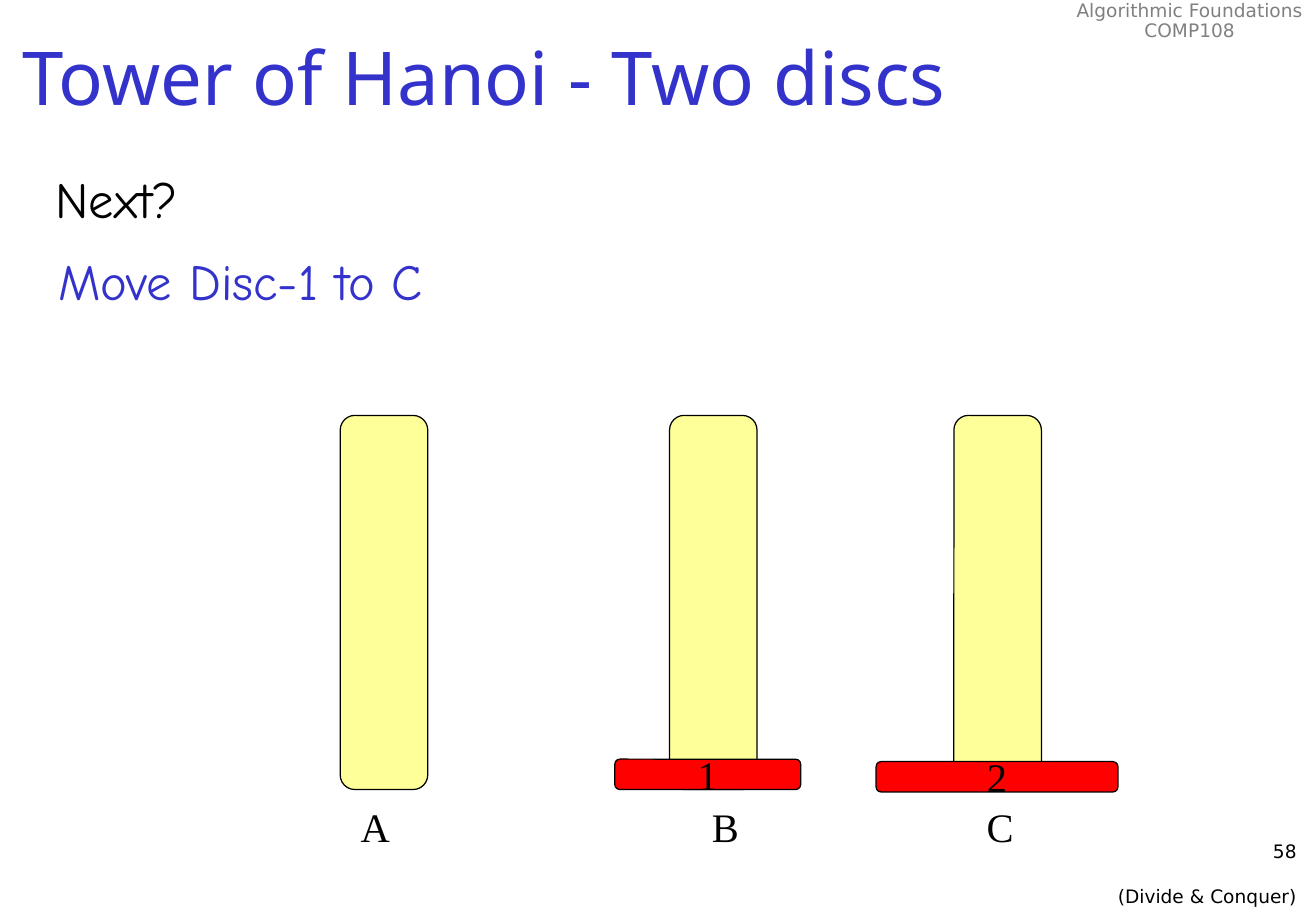
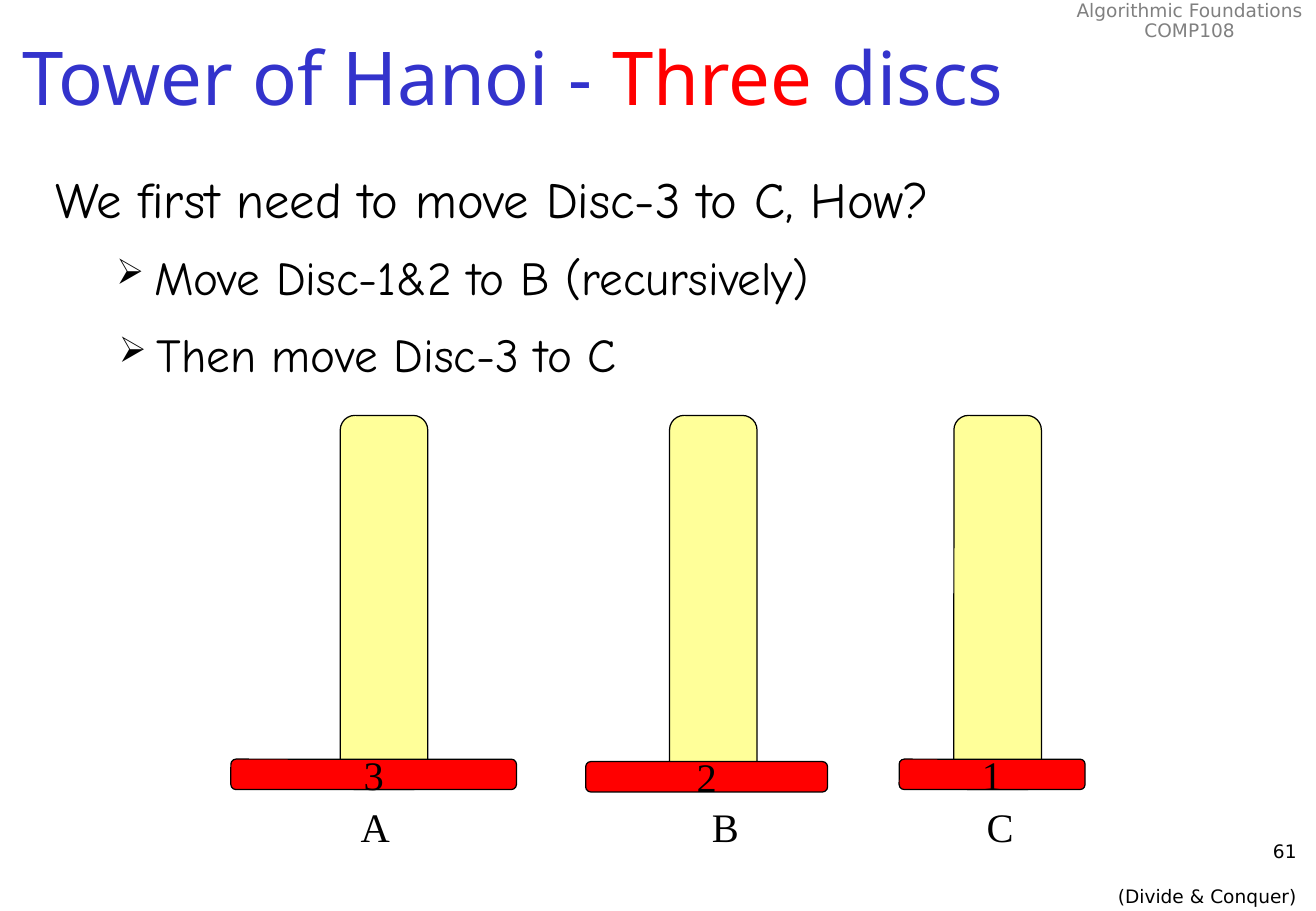
from dataclasses import dataclass

from lxml.etree import SubElement
from pptx import Presentation
from pptx.dml.color import RGBColor
from pptx.enum.shapes import MSO_SHAPE
from pptx.enum.text import MSO_ANCHOR, PP_ALIGN
from pptx.oxml.ns import qn
from pptx.slide import Slide
from pptx.text.text import TextFrame
from pptx.util import Inches, Pt


@dataclass(frozen=True)
class Theme:
    blue: str = "3333CC"
    red: str = "FF0000"
    peg: str = "FFFF99"
    ink: str = "000000"
    gray: str = "808080"
    head: str = "Noto Sans"
    body: str = "Comic Neue"
    note: str = "DejaVu Sans"
    label: str = "Times New Roman"
    title: float = 44
    lead: float = 30
    item: float = 28
    mark: float = 24
    small: float = 11


@dataclass(frozen=True)
class Peg:
    name: str
    left: float
    label: float


@dataclass(frozen=True)
class Disc:
    num: int
    left: float
    top: float = 6.25


T = Theme()
PEGS = (Peg("A", 2.8, 2.87), Peg("B", 5.51, 5.76), Peg("C", 7.85, 8.02))
WIDTHS = {1: 1.53, 2: 1.99, 3: 2.35}


# Text
def write(frame: TextFrame, text: str, *, size: float, font: str,
          color: str = T.ink, accent: str = "", align: PP_ALIGN = PP_ALIGN.LEFT,
          before: float = 0, after: float = 0, line: float = 1,
          bullet: str = "") -> None:
    """Add one paragraph; the accent part of the text is red."""
    para = frame.paragraphs[0]
    if para.runs:
        para = frame.add_paragraph()
    para.alignment = align
    para.space_before, para.space_after = Pt(before), Pt(after)
    para.line_spacing = line
    if bullet:
        props = para._p.get_or_add_pPr()
        props.set("marL", str(Inches(0.81)))
        props.set("indent", str(Inches(-0.31)))
        SubElement(props, qn("a:buSzPct"), val="75000")
        SubElement(props, qn("a:buChar"), char=bullet)
    for part in text.partition(accent) if accent else (text,):
        run = para.add_run()
        run.text = part
        run.font.size, run.font.name = Pt(size), font
        tint = T.red if accent and part == accent else color
        run.font.color.rgb = RGBColor.from_string(tint)


def box(slide: Slide, left: float, top: float, width: float, height: float,
        wrap: bool = True) -> TextFrame:
    area = slide.shapes.add_textbox(
        Inches(left), Inches(top), Inches(width), Inches(height))
    area.text_frame.word_wrap = wrap
    return area.text_frame


def point(frame: TextFrame, text: str) -> None:
    write(frame, text, size=T.item, font=T.body, bullet="➢",
          before=5.6, after=5.6)


# Pegs and discs
def block(slide: Slide, left: float, top: float, width: float, height: float,
          fill: str) -> TextFrame:
    shape = slide.shapes.add_shape(
        MSO_SHAPE.ROUNDED_RECTANGLE,
        Inches(left), Inches(top), Inches(width), Inches(height))
    shape.shadow.inherit = False
    shape.fill.solid()
    shape.fill.fore_color.rgb = RGBColor.from_string(fill)
    shape.line.color.rgb = RGBColor.from_string(T.ink)
    shape.line.width = Pt(0.75)
    return shape.text_frame


def tower(slide: Slide, discs: tuple[Disc, ...]) -> None:
    for peg in PEGS:
        block(slide, peg.left, 3.42, 0.72, 3.08, T.peg)
        write(box(slide, peg.label, 6.55, 0.48, 0.5), peg.name,
              size=T.mark, font=T.label)
    for disc in discs:
        frame = block(slide, disc.left, disc.top, WIDTHS[disc.num], 0.25, T.red)
        frame.word_wrap = False
        frame.vertical_anchor = MSO_ANCHOR.MIDDLE
        write(frame, str(disc.num), size=T.mark, font=T.label,
              align=PP_ALIGN.CENTER)


# Shared slide: header, footer, title, lead line and tower
def page(deck: Presentation, num: int, title: str, lead: str,
         discs: tuple[Disc, ...], accent: str = "") -> tuple[Slide, TextFrame]:
    slide = deck.slides.add_slide(deck.slide_layouts[6])
    head = box(slide, 8.75, -0.04, 2.08, 0.43, wrap=False)
    for text in ("Algorithmic Foundations", "COMP108"):
        write(head, text, size=T.small, font=T.note, color=T.gray,
              align=PP_ALIGN.CENTER, line=0.9)
    foot = box(slide, 8.51, 6.87, 2.26, 0.5)
    for text, gap in ((str(num), 0), ("(Divide & Conquer)", 13)):
        write(foot, text, size=T.small, font=T.note, align=PP_ALIGN.RIGHT,
              before=gap)
    name = box(slide, 0.09, 0, 10.74, 1.25)
    name.vertical_anchor = MSO_ANCHOR.MIDDLE
    write(name, title, size=T.title, font=T.head, color=T.blue, accent=accent)
    body = box(slide, 0.36, 1.33, 10.2, 6)
    write(body, lead, size=T.lead, font=T.body, after=6)
    tower(slide, discs)
    return slide, body


def main() -> None:
    deck = Presentation()
    deck.slide_width, deck.slide_height = Inches(10.83), Inches(7.5)

    # Two discs
    slide, _ = page(deck, 58, "Tower of Hanoi - Two discs", "Next?",
                    (Disc(2, 7.21, 6.27), Disc(1, 5.06)))
    write(box(slide, 0.38, 2.01, 3.49, 0.61), "Move Disc-1 to C",
          size=T.lead, font=T.body, color=T.blue)

    # Three discs
    slide, body = page(deck, 61, "Tower of Hanoi - Three discs",
                       "We first need to move Disc-3 to C, How?",
                       (Disc(3, 1.9), Disc(2, 4.82, 6.27), Disc(1, 7.4)),
                       accent="Three")
    point(body, "Move Disc-1&2 to B (recursively)")
    point(box(slide, 0.38, 2.63, 10.2, 0.6), "Then move Disc-3 to C")

    deck.save("out.pptx")


if __name__ == "__main__":
    main()
